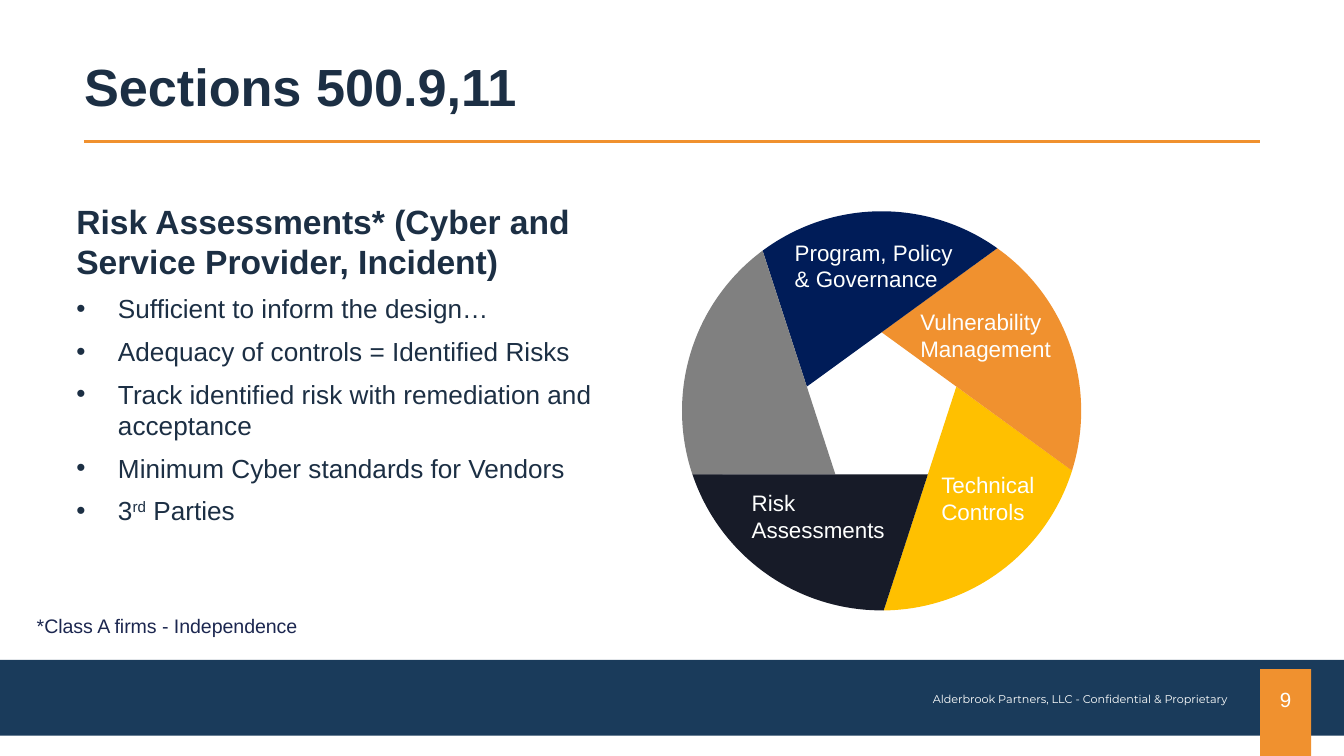
from dataclasses import dataclass
from math import cos, radians, sin

from lxml import etree
from pptx import Presentation
from pptx import util as u
from pptx.dml.color import RGBColor
from pptx.enum import shapes, text
from pptx.oxml import ns

WIDE, HIGH = u.Inches(10), u.Inches(5.625)

INK = RGBColor(0x1C, 0x2F, 0x44)
NOTE = RGBColor(0x1C, 0x27, 0x50)
BAND = RGBColor(0x1A, 0x3B, 0x5B)
ORANGE = RGBColor(0xF0, 0x91, 0x2F)
GOLD = RGBColor(0xFF, 0xC0, 0x00)
NAVY = RGBColor(0x00, 0x1C, 0x58)
GRAY = RGBColor(0x80, 0x80, 0x80)
DARK = RGBColor(0x17, 0x1B, 0x28)
WHITE = RGBColor(0xFE, 0xFF, 0xFE)


@dataclass
class Box:
    """Place as percent of the slide's width and height."""
    x: float
    y: float
    w: float
    h: float

    def place(self) -> tuple:
        return (px(self.x), py(self.y), px(self.w), py(self.h))


@dataclass
class Font:
    size: float
    color: RGBColor
    bold: bool = False
    name: str = "Arial"


@dataclass
class Blade:
    """One fifth of the wheel, starting at an angle in degrees."""
    start: int
    fill: RGBColor


@dataclass
class Label:
    box: Box
    lines: list


def px(share: float) -> int:
    return round(WIDE * share / 100)


def py(share: float) -> int:
    return round(HIGH * share / 100)


def add_run(para, words: str, font: Font, raised: bool = False) -> None:
    run = para.add_run()
    run.text = words
    run.font.size = u.Pt(font.size)
    run.font.bold = font.bold
    run.font.name = font.name
    run.font.color.rgb = font.color
    if raised:
        run._r.get_or_add_rPr().set("baseline", "30000")


def add_text(slide, box: Box, lines: list, font: Font, wrap: bool = True):
    frame = slide.shapes.add_textbox(*box.place()).text_frame
    frame.word_wrap = wrap
    frame.auto_size = text.MSO_AUTO_SIZE.SHAPE_TO_FIT_TEXT
    for i, line in enumerate(lines):
        para = frame.add_paragraph() if i else frame.paragraphs[0]
        add_run(para, line, font)
    return frame


def add_bullet(para) -> None:
    props = para._p.get_or_add_pPr()
    props.set("marL", str(u.Inches(0.31)))
    props.set("indent", str(-u.Inches(0.31)))
    etree.SubElement(props, ns.qn("a:buFont"), typeface="Arial")
    etree.SubElement(props, ns.qn("a:buChar"), char="•")


def paint(shape, fill: RGBColor) -> None:
    shape.shadow.inherit = False
    shape.fill.solid()
    shape.fill.fore_color.rgb = fill
    shape.line.fill.background()


def add_rect(slide, box: Box, fill: RGBColor):
    rect = slide.shapes.add_shape(shapes.MSO_SHAPE.RECTANGLE, *box.place())
    paint(rect, fill)
    return rect


# Wheel: radii as percent of the slide's width, angles in degrees
MID = (px(65.6), py(54.35))
RIM, HOLE = px(14.85), px(5.85)
STEP, SLIP = 72, 0.6


def polar(radius: int, angle: float) -> tuple:
    turn = radians(angle)
    return (round(MID[0] + radius * cos(turn)),
            round(MID[1] + radius * sin(turn)))


def add_blade(slide, blade: Blade) -> None:
    first = blade.start - SLIP
    rim = [polar(RIM, first + a) for a in range(0, STEP + 1, 2)]
    build = slide.shapes.build_freeform(*rim[0])
    build.add_line_segments(rim[1:] + [polar(HOLE, blade.start - STEP / 2)])
    shape = build.convert_to_shape()
    paint(shape, blade.fill)
    # The rim's short steps set the bounds, then become one true arc
    steps = list(shape._element.iter(ns.qn("a:lnTo")))[:len(rim) - 1]
    arc = etree.Element(ns.qn("a:arcTo"), wR=str(RIM), hR=str(RIM),
                        stAng=str(round(first * 60000)),
                        swAng=str(STEP * 60000))
    steps[0].addprevious(arc)
    for step in steps:
        step.getparent().remove(step)


HEAD = "Risk Assessments* (Cyber and Service Provider, Incident)"
POINTS = [
    ["Sufficient to inform the design…"],
    ["Adequacy of controls = Identified Risks"],
    ["Track identified risk with remediation and acceptance"],
    ["Minimum Cyber standards for Vendors"],
    ["3", "rd", " Parties"],
]
BLADES = [Blade(18, GOLD), Blade(306, ORANGE), Blade(234, NAVY),
          Blade(162, GRAY), Blade(90, DARK)]
LABELS = [
    Label(Box(58.15, 30.7, 14.7, 8.9), ["Program, Policy & Governance"]),
    Label(Box(67.5, 39.95, 14.7, 8.9), ["Vulnerability Management"]),
    Label(Box(69.05, 61.5, 12.2, 8.9), ["Technical", "Controls"]),
    Label(Box(54.95, 63.85, 12.2, 8.9), ["Risk Assessments"]),
]


def add_frame(slide) -> None:
    # Footer band, rule and page tab
    add_rect(slide, Box(0, 87.3, 100, 10), BAND)
    rule = slide.shapes.add_connector(
        shapes.MSO_CONNECTOR.STRAIGHT,
        px(6.25), py(18.7), px(93.75), py(18.7))
    rule.line.color.rgb = ORANGE
    rule.line.width = u.Pt(1.5)
    etree.SubElement(rule._element.spPr, ns.qn("a:effectLst"))

    tab = add_rect(slide, Box(93.75, 88.5, 3.8, 11.5), ORANGE).text_frame
    tab.margin_left = tab.margin_top = tab.margin_right = 0
    tab.margin_bottom = u.Inches(0.2)
    tab.word_wrap = False
    tab.vertical_anchor = text.MSO_ANCHOR.MIDDLE
    tab.paragraphs[0].alignment = text.PP_ALIGN.CENTER
    add_run(tab.paragraphs[0], "9", Font(11, WHITE))

    foot = add_text(slide, Box(67.8, 90.7, 24.5, 3.6),
                    ["Alderbrook Partners, LLC - Confidential & Proprietary"],
                    Font(6, WHITE, name="Montserrat"), wrap=False)
    foot.vertical_anchor = text.MSO_ANCHOR.MIDDLE
    foot.paragraphs[0].alignment = text.PP_ALIGN.RIGHT


def add_title(slide) -> None:
    title = slide.shapes.title
    title.left, title.top, title.width, title.height = Box(
        6.25, 7.8, 87.5, 7.8).place()
    frame = title.text_frame
    frame.margin_left = frame.margin_right = 0
    frame.margin_top = frame.margin_bottom = 0
    frame.vertical_anchor = text.MSO_ANCHOR.BOTTOM
    frame.auto_size = text.MSO_AUTO_SIZE.NONE
    para = frame.paragraphs[0]
    para.alignment = text.PP_ALIGN.LEFT
    para.line_spacing = 0.9
    add_run(para, "Sections 500.9,11", Font(28, INK, bold=True))


def add_body(slide) -> None:
    frame = add_text(slide, Box(4.7, 25.5, 41.3, 45.15), [HEAD],
                     Font(18, INK, bold=True))
    frame.vertical_anchor = text.MSO_ANCHOR.MIDDLE
    for point in POINTS:
        para = frame.add_paragraph()
        add_bullet(para)
        for part in point:
            add_run(para, part, Font(14, INK), raised=part == "rd")
    for para in frame.paragraphs:
        para.space_after = u.Pt(6)


def main() -> None:
    deck = Presentation()
    deck.slide_width, deck.slide_height = WIDE, HIGH
    slide = deck.slides.add_slide(deck.slide_layouts.get_by_name("Title Only"))
    add_frame(slide)
    add_title(slide)
    add_body(slide)
    add_text(slide, Box(1.75, 80.35, 22, 5),
             ["*Class A firms - Independence"], Font(10.5, NOTE), wrap=False)
    # Wheel and its labels
    for blade in BLADES:
        add_blade(slide, blade)
    for label in LABELS:
        add_text(slide, label.box, label.lines, Font(12, WHITE))
    deck.save("out.pptx")


if __name__ == "__main__":
    main()
